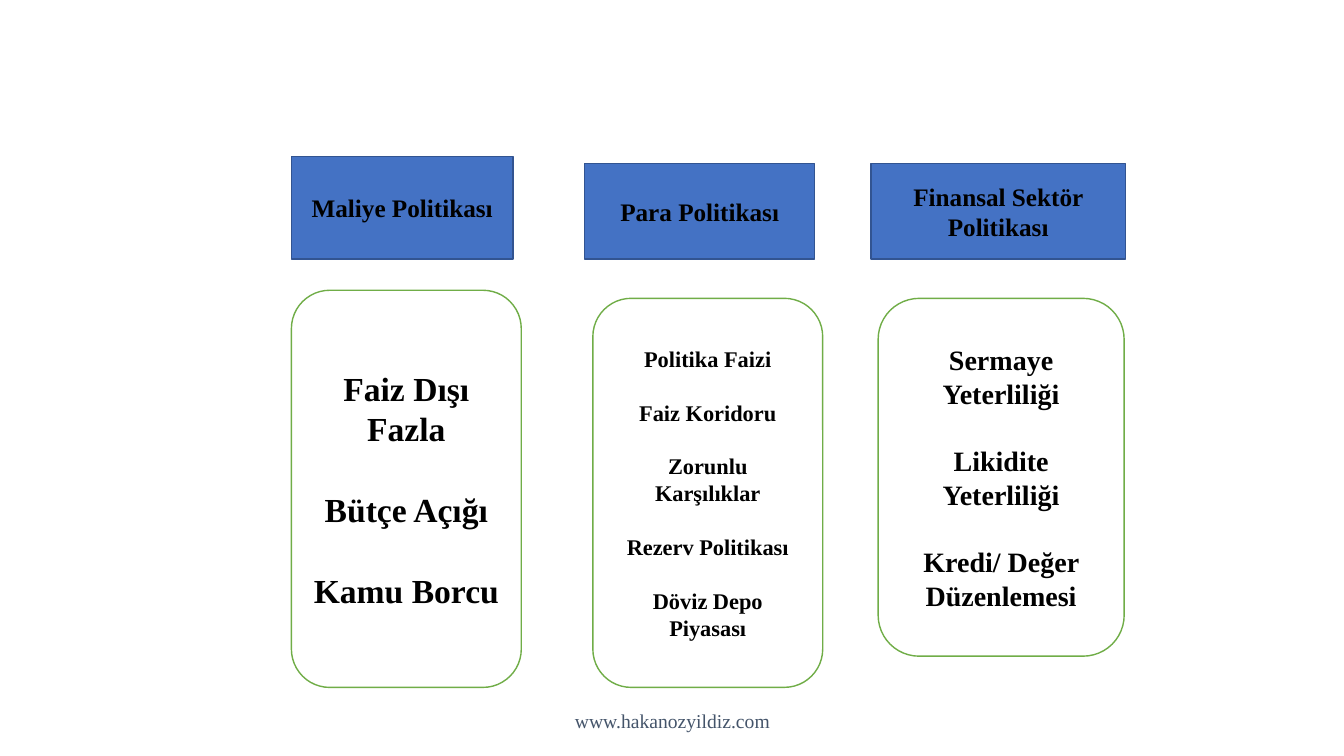
from dataclasses import dataclass

from pptx import Presentation
from pptx.dml.color import RGBColor
from pptx.enum.shapes import MSO_SHAPE as SHAPE
from pptx.enum.text import MSO_ANCHOR as ANCHOR, PP_ALIGN as ALIGN
from pptx.slide import Slide
from pptx.text.text import TextFrame
from pptx.util import Inches, Pt

BLUE = RGBColor(0x44, 0x72, 0xC4)
DARK_BLUE = RGBColor(0x32, 0x54, 0x91)
GREEN = RGBColor(0x70, 0xAD, 0x47)
SLATE = RGBColor(0x44, 0x54, 0x6A)
WHITE = RGBColor(0xFF, 0xFF, 0xFF)
BLACK = RGBColor(0x00, 0x00, 0x00)

FONT = "Times New Roman"
HEADER_SIZE = 18
FOOTER_SIZE = 14
LINE_HEIGHT = 1.2
HEADER_BOTTOM = 2.57


@dataclass(frozen=True)
class Box:
    left: float
    top: float
    width: float
    height: float


@dataclass(frozen=True)
class Policy:
    title: str
    header: Box
    tools: tuple[str, ...]
    panel: Box
    size: int


POLICIES = (
    Policy(
        "Maliye Politikası", Box(2.89, 1.55, 2.2, HEADER_BOTTOM - 1.55),
        ("Faiz Dışı Fazla", "Bütçe Açığı", "Kamu Borcu"),
        Box(2.89, 2.88, 2.28, 3.94), 24,
    ),
    Policy(
        "Para Politikası", Box(5.8, 1.62, 2.28, HEADER_BOTTOM - 1.62),
        ("Politika Faizi", "Faiz Koridoru", "Zorunlu Karşılıklar",
         "Rezerv Politikası", "Döviz Depo Piyasası"),
        Box(5.88, 2.96, 2.28, 3.86), 16,
    ),
    Policy(
        "Finansal Sektör Politikası", Box(8.64, 1.62, 2.52, HEADER_BOTTOM - 1.62),
        ("Sermaye Yeterliliği", "Likidite Yeterliliği", "Kredi/ Değer Düzenlemesi"),
        Box(8.71, 2.96, 2.44, 3.55), 20,
    ),
)


def place(box: Box) -> tuple[Inches, Inches, Inches, Inches]:
    return Inches(box.left), Inches(box.top), Inches(box.width), Inches(box.height)


def write(tf: TextFrame, lines: tuple[str, ...], size: int,
          color: RGBColor, bold: bool) -> None:
    """Centre the lines, one paragraph each, a line height apart."""
    tf.word_wrap = True
    tf.vertical_anchor = ANCHOR.MIDDLE
    for i, line in enumerate(lines):
        p = tf.add_paragraph() if i else tf.paragraphs[0]
        p.alignment = ALIGN.CENTER
        if i:
            p.space_before = Pt(size * LINE_HEIGHT)
        r = p.add_run()
        r.text = line
        r.font.name = FONT
        r.font.size = Pt(size)
        r.font.bold = bold
        r.font.color.rgb = color


def add_box(slide: Slide, kind: SHAPE, box: Box, fill: RGBColor, line: RGBColor,
            lines: tuple[str, ...], size: int) -> None:
    sp = slide.shapes.add_shape(kind, *place(box))
    sp.shadow.inherit = False
    sp.fill.solid()
    sp.fill.fore_color.rgb = fill
    sp.line.color.rgb = line
    sp.line.width = Pt(1)
    write(sp.text_frame, lines, size, BLACK, True)


def add_footer(slide: Slide) -> None:
    sp = slide.shapes.add_textbox(*place(Box(4.42, 6.95, 4.5, 0.4)))
    write(sp.text_frame, ("www.hakanozyildiz.com",), FOOTER_SIZE, SLATE, False)


def main() -> None:
    prs = Presentation()
    prs.slide_width, prs.slide_height = Inches(13.33), Inches(7.5)
    slide = prs.slides.add_slide(prs.slide_layouts[6])

    add_footer(slide)
    for policy in POLICIES:
        add_box(slide, SHAPE.RECTANGLE, policy.header, BLUE, DARK_BLUE,
                (policy.title,), HEADER_SIZE)
        add_box(slide, SHAPE.ROUNDED_RECTANGLE, policy.panel, WHITE, GREEN,
                policy.tools, policy.size)
    prs.save("out.pptx")


if __name__ == "__main__":
    main()
